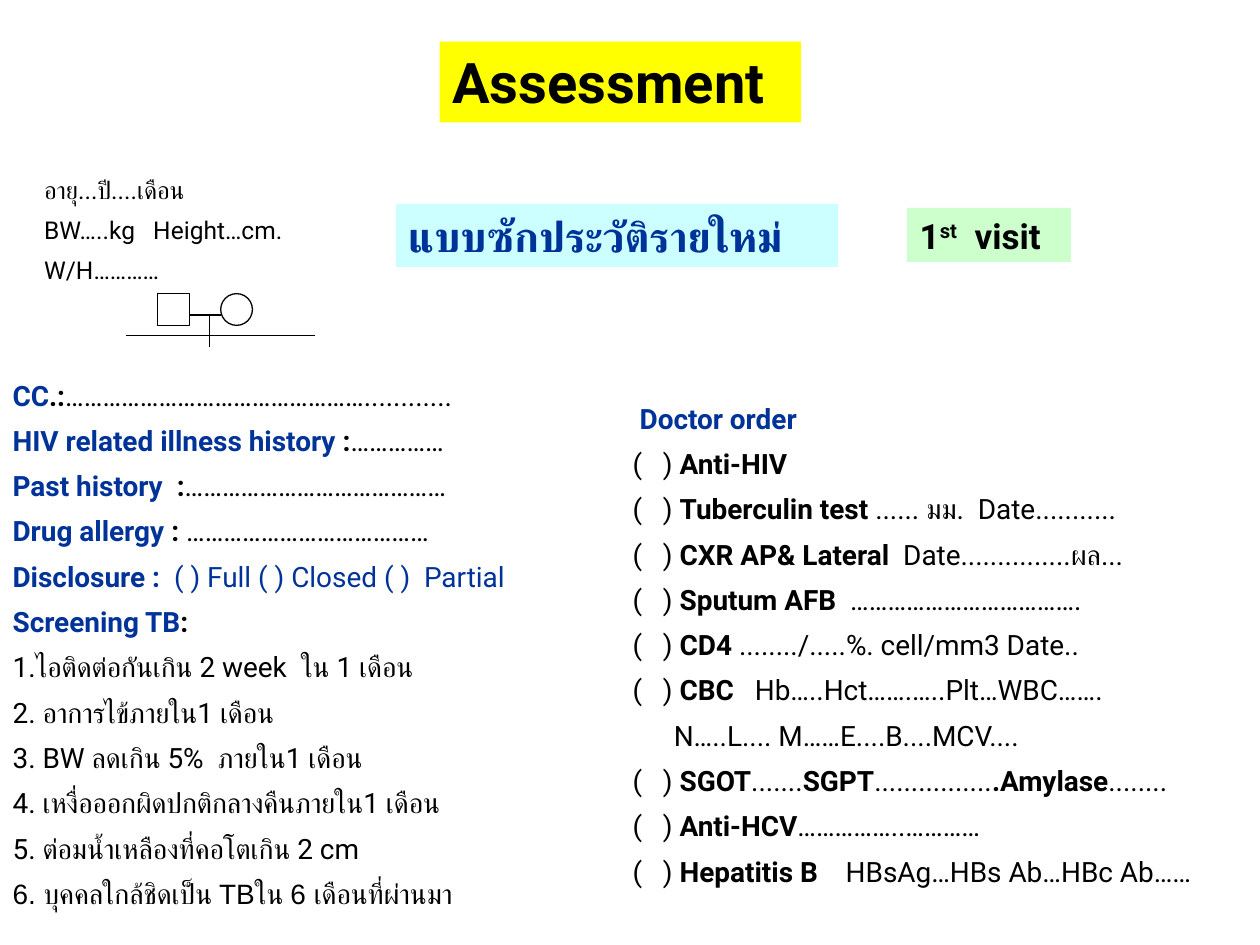
from dataclasses import dataclass

from lxml.etree import SubElement
from pptx import Presentation
from pptx.dml.color import RGBColor
from pptx.enum.shapes import MSO_CONNECTOR, MSO_SHAPE
from pptx.enum.text import MSO_ANCHOR, MSO_AUTO_SIZE, PP_ALIGN
from pptx.oxml.ns import qn
from pptx.util import Cm, Pt

BLACK = RGBColor(0x00, 0x00, 0x00)
WHITE = RGBColor(0xFF, 0xFF, 0xFF)
BLUE = RGBColor(0x00, 0x33, 0x99)
YELLOW = RGBColor(0xFF, 0xFF, 0x00)
CYAN = RGBColor(0xCC, 0xFF, 0xFF)
GREEN = RGBColor(0xCC, 0xFF, 0xCC)
LINE_WIDTH = Pt(0.75)
LIST_SPACING = 1.35
CHECKBOX = "(   ) "


@dataclass(frozen=True)
class Box:
    """Position and size in centimetres."""
    left: float
    top: float
    width: float
    height: float

    def lengths(self) -> tuple:
        return Cm(self.left), Cm(self.top), Cm(self.width), Cm(self.height)


@dataclass(frozen=True)
class Span:
    text: str
    bold: bool = False
    color: RGBColor = BLACK
    font: str = "Roboto"
    superscript: bool = False


@dataclass(frozen=True)
class Line:
    spans: tuple
    margin: float = 0
    indent: float = 0


def bold(text: str, color: RGBColor = BLACK) -> Span:
    return Span(text, True, color)


def history(label: str, colon: str, dots: str = "") -> Line:
    return hanging(bold(label, BLUE), bold(colon), Span(dots))


def hanging(*spans: Span) -> Line:
    return Line(spans, margin=1.48, indent=-1.48)


def order(*spans: Span) -> Line:
    return Line((Span(CHECKBOX),) + spans)


HISTORY = [
    history("CC", ".:", "…………………………………………............"),
    history("HIV related illness history", " :", "……………"),
    history("Past history ", " :", "……………………………………"),
    history("Drug allergy ", ": ", "…………………………………"),
    hanging(bold("Disclosure :  ", BLUE),
            Span("( ) Full ( ) Closed ( )  Partial", color=BLUE)),
    history("Screening TB", ":"),
    hanging(Span("1.ไอติดต่อกันเกิน 2 week  ใน 1 เดือน")),
    hanging(Span("2. อาการไข้ภายใน1 เดือน")),
    hanging(Span("3. BW ลดเกิน 5%  ภายใน1 เดือน")),
    hanging(Span("4. เหงื่อออกผิดปกติกลางคืนภายใน1 เดือน")),
    hanging(Span("5. ต่อมน้ำเหลืองที่คอโตเกิน 2 cm")),
    hanging(Span("6. บุคคลใกล้ชิดเป็น TBใน 6 เดือนที่ผ่านมา", font="Arial")),
]

ORDERS = [
    Line((Span(" "), bold("Doctor order", BLUE))),
    order(bold("Anti-HIV")),
    order(bold("Tuberculin test"), Span(" ...... มม.  Date...........")),
    order(bold("CXR AP& Lateral"), Span("  Date...............ผล...")),
    order(bold("Sputum AFB"), Span("  ……………………………….")),
    order(bold("CD4 "), Span("......../.....%. cell/mm3 Date..")),
    order(bold("CBC   "), Span("Hb…..Hct…….…..Plt…WBC…….")),
    Line((Span("N…..L.... M……E....B....MCV...."),), margin=0.83),
    order(bold("SGOT"), Span("......."), bold("SGPT"), Span("................"),
          bold(".Amylase"), Span("........")),
    order(bold("Anti-HCV"), Span("……………..…………")),
    order(bold("Hepatitis B"), Span("    HBsAg…HBs Ab…HBc Ab……")),
]

MEASUREMENTS = [
    Line((Span("อายุ...ปี....เดือน"),)),
    Line((Span("BW…..kg   Height…cm. W/H…………"),)),
]


def write_text(shape, lines: list, *, size: float, spacing: float = 1.0,
               anchor: MSO_ANCHOR = MSO_ANCHOR.MIDDLE) -> None:
    frame = shape.text_frame
    frame.word_wrap = True
    frame.auto_size = MSO_AUTO_SIZE.NONE
    frame.vertical_anchor = anchor
    for number, line in enumerate(lines):
        paragraph = frame.add_paragraph() if number else frame.paragraphs[0]
        paragraph.alignment = PP_ALIGN.LEFT
        paragraph.line_spacing = spacing
        paragraph.space_before = paragraph.space_after = Pt(0)
        properties = paragraph._p.get_or_add_pPr()
        properties.set("marL", str(Cm(line.margin)))
        properties.set("indent", str(Cm(line.indent)))
        SubElement(properties, qn("a:buNone"))
        for span in line.spans:
            if not span.text:
                continue
            run = paragraph.add_run()
            run.text = span.text
            run.font.name = span.font
            run.font.size = Pt(size)
            run.font.bold = span.bold
            run.font.color.rgb = span.color
            if span.superscript:
                run._r.get_or_add_rPr().set("baseline", "30000")


def place(shape, box: Box) -> None:
    shape.left, shape.top, shape.width, shape.height = box.lengths()


def add_symbol(slide, preset: MSO_SHAPE, box: Box, fill: RGBColor, outlined: bool):
    shape = slide.shapes.add_shape(preset, *box.lengths())
    shape.shadow.inherit = False
    shape.fill.solid()
    shape.fill.fore_color.rgb = fill
    if outlined:
        shape.line.color.rgb = BLACK
        shape.line.width = LINE_WIDTH
    else:
        shape.line.fill.background()
    return shape


def add_line(slide, start: tuple, end: tuple) -> None:
    connector = slide.shapes.add_connector(
        MSO_CONNECTOR.STRAIGHT, *map(Cm, start + end))
    connector.line.color.rgb = BLACK
    connector.line.width = LINE_WIDTH
    SubElement(connector._element.spPr, qn("a:effectLst"))


def add_family_tree(slide) -> None:
    for preset, left in ((MSO_SHAPE.OVAL, 4.45), (MSO_SHAPE.RECTANGLE, 3.18)):
        add_symbol(slide, preset, Box(left, 5.92, 0.64, 0.64), WHITE, True)
    add_line(slide, (3.81, 6.35), (4.45, 6.35))
    add_line(slide, (4.23, 6.35), (4.23, 6.99))
    add_line(slide, (2.54, 6.77), (6.35, 6.77))


def main() -> None:
    presentation = Presentation()
    presentation.slide_width, presentation.slide_height = Cm(25.4), Cm(19.05)
    slide = presentation.slides.add_slide(
        presentation.slide_layouts.get_by_name("Two Content"))
    title, history_list, order_list = slide.placeholders

    add_family_tree(slide)
    measurements = slide.shapes.add_textbox(*Box(0.64, 3.18, 5.92, 2.69).lengths())
    write_text(measurements, MEASUREMENTS, size=14, spacing=LIST_SPACING)

    place(history_list, Box(0, 7.2, 12.01, 11.33))
    write_text(history_list, HISTORY, size=16, spacing=LIST_SPACING)
    place(order_list, Box(12.5, 7.67, 12.9, 10.41))
    write_text(order_list, ORDERS, size=16, spacing=LIST_SPACING)

    form_name = add_symbol(slide, MSO_SHAPE.RECTANGLE,
                           Box(7.98, 4.11, 8.92, 1.27), CYAN, False)
    write_text(form_name, [Line((Span("แบบซักประวัติรายใหม่", True, BLUE, "Arial"),))],
               size=24, anchor=MSO_ANCHOR.TOP)
    visit = add_symbol(slide, MSO_SHAPE.RECTANGLE,
                       Box(18.29, 4.19, 3.3, 1.09), GREEN, False)
    write_text(visit, [Line((bold("1"), Span("st", True, superscript=True),
                             bold("  visit")))], size=20, anchor=MSO_ANCHOR.TOP)

    place(title, Box(8.86, 0.84, 7.29, 1.63))
    title.fill.solid()
    title.fill.fore_color.rgb = YELLOW
    write_text(title, [Line((bold("Assessment"),))], size=32, anchor=MSO_ANCHOR.TOP)

    presentation.save("out.pptx")


if __name__ == "__main__":
    main()
